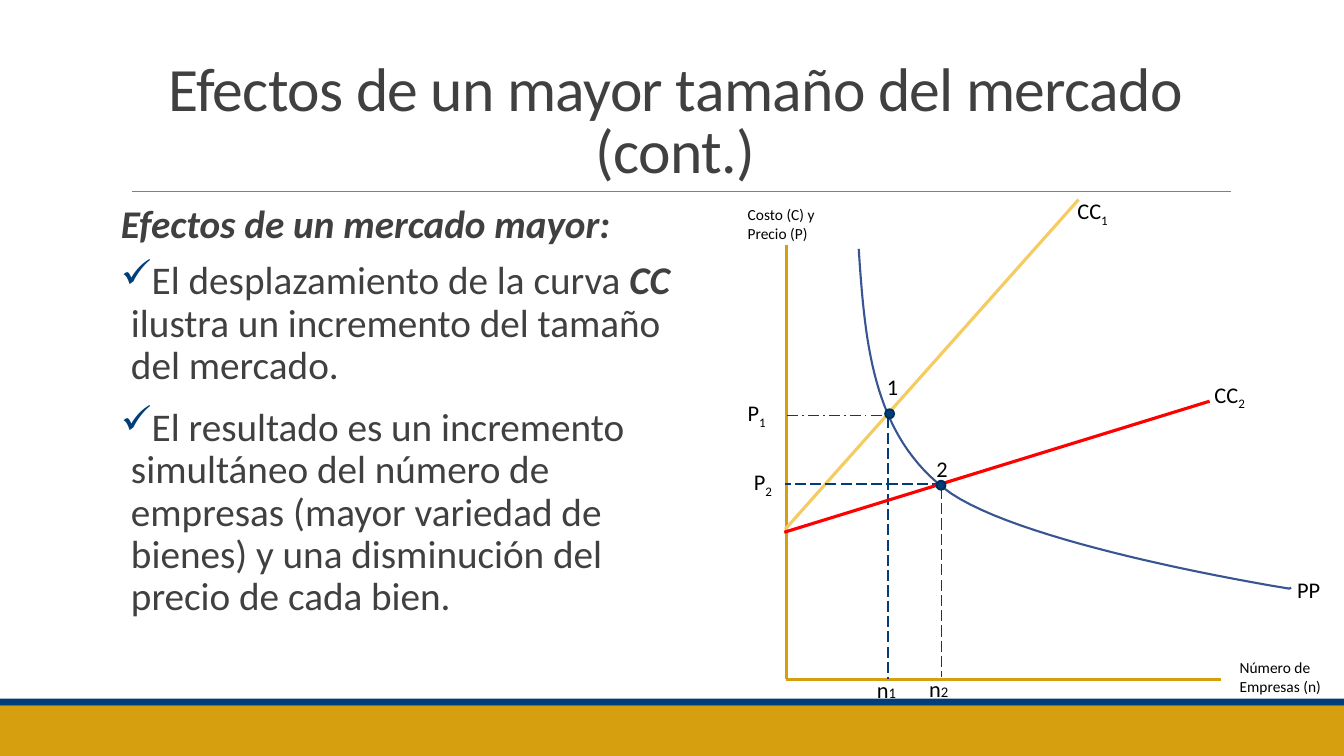
from lxml import etree
from pptx import Presentation
from pptx.dml.color import RGBColor
from pptx.enum.dml import MSO_LINE
from pptx.enum.shapes import MSO_CONNECTOR, MSO_SHAPE
from pptx.enum.text import MSO_ANCHOR, MSO_AUTO_SIZE, PP_ALIGN
from pptx.oxml.ns import qn
from pptx.util import Pt

GOLD = RGBColor(0xD5, 0x9F, 0x0F)
PALE = RGBColor(0xF4, 0xCC, 0x61)
NAVY = RGBColor(0x00, 0x3D, 0x79)
DEEP = RGBColor(0x00, 0x2D, 0x5A)
BLUE = RGBColor(0x38, 0x55, 0x92)
RED = RGBColor(0xFF, 0x00, 0x00)
GRAY = RGBColor(0x80, 0x80, 0x80)
DARK = RGBColor(0x40, 0x40, 0x40)
BLACK = RGBColor(0x00, 0x00, 0x00)

RECT, OVAL = MSO_SHAPE.RECTANGLE, MSO_SHAPE.OVAL
STRAIGHT = MSO_CONNECTOR.STRAIGHT
DASH, DOTS = MSO_LINE.LONG_DASH, MSO_LINE.LONG_DASH_DOT
LEFT, MID, JUST = PP_ALIGN.LEFT, PP_ALIGN.CENTER, PP_ALIGN.JUSTIFY
FONT = "Calibri"
INDENT = 7.2


def write(par, text, size=16, color=BLACK, bold=False, base=0, gap=0):
    """Add one run; base is the baseline shift in percent, gap the letter spacing."""
    run = par.add_run()
    run.text = text
    font = run.font
    font.name, font.size, font.color.rgb = FONT, Pt(size), color
    font.bold = font.italic = bold
    props = font._element
    if base:
        props.set("baseline", str(base * 1000))
    if gap:
        props.set("spc", str(int(gap * 100)))


def pace(par, align=LEFT):
    par.alignment = align
    par.line_spacing = 0.9
    par.space_before, par.space_after = Pt(12), Pt(2)


def tick(par):
    props = par._p.get_or_add_pPr()
    props.set("marL", str(Pt(INDENT)))
    props.set("indent", str(-Pt(INDENT)))
    color = etree.SubElement(props, qn("a:buClr"))
    etree.SubElement(color, qn("a:srgbClr")).set("val", str(NAVY))
    etree.SubElement(props, qn("a:buChar")).set("char", "✓")


def frame(slide, box, wrap=True, side=7.2):
    area = slide.shapes.add_textbox(*map(Pt, box)).text_frame
    area.word_wrap = wrap
    area.margin_left = area.margin_right = Pt(side)
    return area


def solid(slide, kind, box, fill, edge=None):
    shape = slide.shapes.add_shape(kind, *map(Pt, box))
    shape.shadow.inherit = False
    shape.fill.solid()
    shape.fill.fore_color.rgb = fill
    if edge:
        shape.line.color.rgb, shape.line.width = edge, Pt(1.25)
    else:
        shape.line.fill.background()


def stroke(slide, ends, color, width, dash=None):
    line = slide.shapes.add_connector(STRAIGHT, *map(Pt, ends))
    line.line.color.rgb, line.line.width = color, Pt(width)
    if dash:
        line.line.dash_style = dash
    etree.SubElement(line._element.spPr, qn("a:effectLst"))


def bezier(pts, steps=30):
    """Points along a cubic curve, without its start."""
    for i in range(1, steps + 1):
        t = i / steps
        mix = ((1 - t) ** 3, 3 * t * (1 - t) ** 2, 3 * t * t * (1 - t), t ** 3)
        yield tuple(sum(m * p[k] for m, p in zip(mix, pts)) for k in (0, 1))


def base(slide, wide, high):
    solid(slide, RECT, (0, high - 36, wide, 36), GOLD)
    solid(slide, RECT, (0, high - 41, wide, 5), NAVY)
    stroke(slide, (94.3, 136.8, 879.1, 136.8), GRAY, 0.5)


def head(slide, box):
    title = slide.shapes.title
    title.left, title.top, title.width, title.height = map(Pt, box)
    area = title.text_frame
    area.word_wrap, area.auto_size = True, MSO_AUTO_SIZE.NONE
    area.vertical_anchor = MSO_ANCHOR.BOTTOM
    par = area.paragraphs[0]
    par.alignment, par.line_spacing = MID, 0.85
    write(par, "Efectos de un mayor tamaño del mercado (cont.)",
          size=44, color=DARK, gap=-0.5)


def body(slide, box):
    x, y, wide, high = box
    lead = frame(slide, (x, y, 792, 40.3), side=0).paragraphs[0]
    pace(lead, JUST)
    write(lead, "Efectos de un mercado mayor:", size=28, color=DARK, bold=True)
    area = frame(slide, (x, y + 40.3, wide, high - 40.3), side=0)
    points = (
        (("El desplazamiento de la curva ", False), ("CC ", True),
         ("ilustra un incremento del tamaño del mercado.", False)),
        (("El resultado es un incremento simultáneo del número de empresas "
          "(mayor variedad de bienes) y una disminución del precio de cada "
          "bien.", False),),
    )
    for i, runs in enumerate(points):
        par = area.add_paragraph() if i else area.paragraphs[0]
        pace(par)
        tick(par)
        for text, bold in runs:
            write(par, text, size=28, color=DARK, bold=bold)


def curve(slide, x, y):
    start, knee, end = (86.4, 40.8), (146.9, 211.5), (393.9, 283.5)
    pts = [*bezier((start, (90.8, 106.4), (95.8, 171.2), knee)),
           *bezier((knee, (198, 252.5), end, end)), (395.3, 282.8)]
    path = slide.shapes.build_freeform(Pt(x + start[0]), Pt(y + start[1]))
    path.add_line_segments([(Pt(x + a), Pt(y + b)) for a, b in pts], close=False)
    shape = path.convert_to_shape()
    shape.shadow.inherit = False
    shape.fill.background()
    shape.line.color.rgb, shape.line.width = BLUE, Pt(1.5)


def graph(slide, box):
    """Draw the CC and PP curves with axes, guides and labels."""
    x, y = box[:2]

    def lines(rows):
        for (a, b, c, d), *look in rows:
            stroke(slide, (x + a, y + b, x + c, y + d), *look)

    lines((
        ((34.6, 38, 34.6, 348.3), GOLD, 2.25),
        ((34.6, 348.3, 344.9, 348.3), GOLD, 2.25),
        ((33.9, 241, 243.4, 5.6), PALE, 2.25),
    ))
    curve(slide, x, y)
    lines((
        ((35.3, 159.6, 108.8, 159.6), NAVY, 1, DOTS),
        ((107.3, 161.1, 107.3, 348.3), NAVY, 1, DASH),
        ((145.5, 211.5, 145.5, 346.8), NAVY, 1, DASH),
        ((146.9, 208.6, 33.9, 208.6), NAVY, 1, DASH),
        ((33.2, 243.2, 337, 149.6), RED, 2.25),
    ))
    for a, b in ((141.9, 206.4), (105.2, 155.3)):
        solid(slide, OVAL, (x + a, y + b, 6.5, 6.5), NAVY, DEEP)

    for text, a, b in (("Costo (C) y Precio (P)", 0, 6.3),
                       ("Número de Empresas (n)", 351.4, 329.6)):
        area = frame(slide, (x + a, y + b, 90.7, 33.8))
        write(area.paragraphs[0], text, size=11)

    sub, small = {"base": -25}, {"size": 10.5}
    for text, mark, look, a, b, wide in (
        ("P", "1", sub, 0, 144.5, 28.1),
        ("P", "2", sub, 4.4, 194.2, 28.1),
        ("n", "1", small, 92.2, 342.5, 28.1),
        ("n", "2", small, 129.6, 341.8, 28.1),
        ("CC", "1", sub, 235.5, 0.5, 37.4),
        ("CC", "2", sub, 333.4, 131.6, 37.4),
        ("PP", "", sub, 392.4, 271.2, 31),
        ("1", "", sub, 99.4, 125.8, 23),
        ("2", "", sub, 134.7, 184.8, 23),
    ):
        par = frame(slide, (x + a, y + b, wide, 26.6), wrap=False).paragraphs[0]
        write(par, text)
        if mark:
            write(par, mark, **look)


def main():
    deck = Presentation()
    wide, high = 960, 540
    deck.slide_width, deck.slide_height = Pt(wide), Pt(high)
    slide = deck.slides.add_slide(deck.slide_layouts[5])
    base(slide, wide, high)
    head(slide, (86.4, 22.3, 792, 114.5))
    body(slide, (86.4, 142.6, 393.8, 397.4))
    graph(slide, (527, 137, 433, 367))
    deck.save("out.pptx")


if __name__ == "__main__":
    main()
